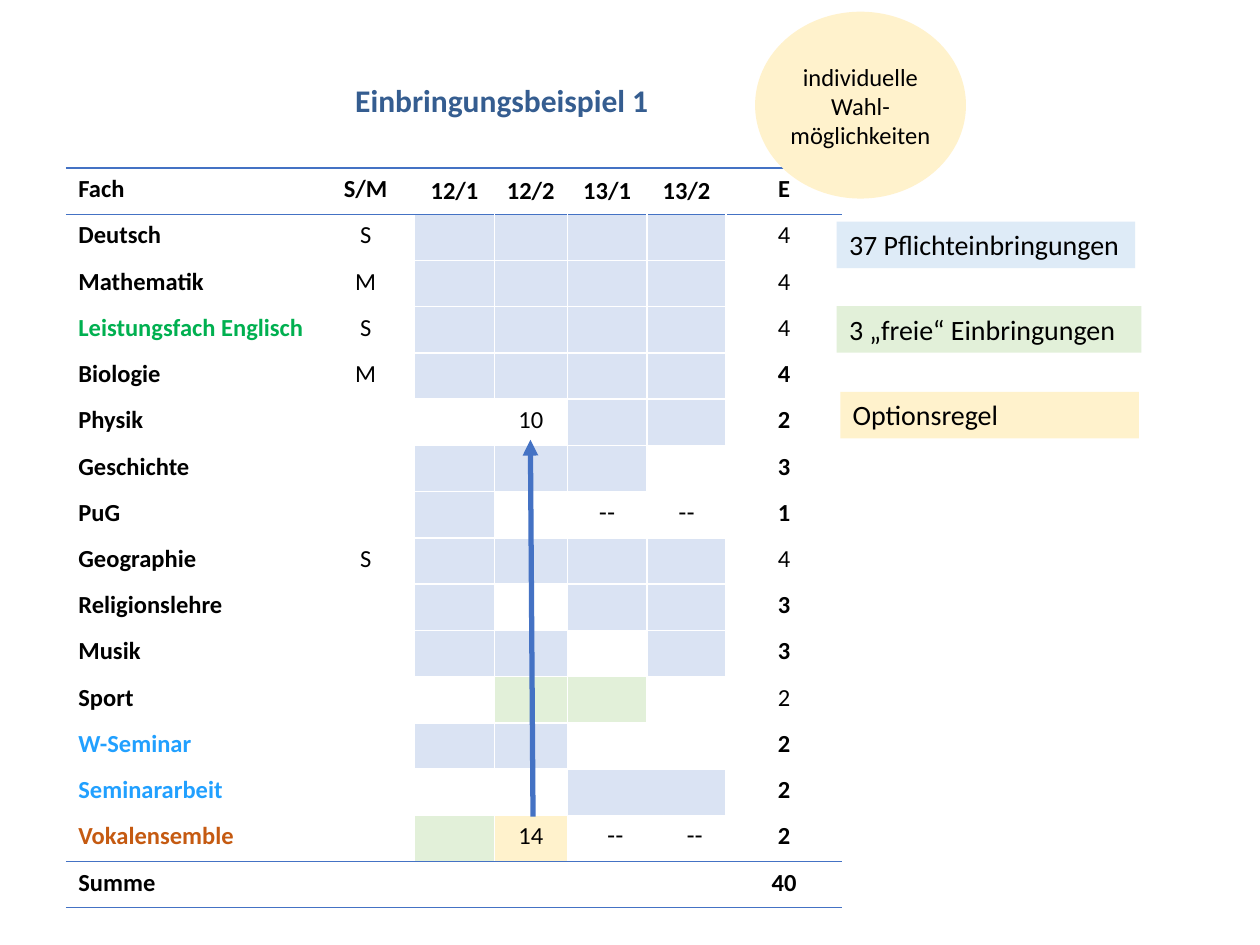
from lxml import etree
from pptx import Presentation
from pptx.dml.color import RGBColor
from pptx.enum import shapes as sh, text as tx
from pptx.oxml.ns import qn
from pptx.util import Pt


def hue(code):
    return RGBColor.from_string(code)


def write(para, words, size, color="000000", bold=False, font="Calibri"):
    run = para.add_run()
    run.text = words
    run.font.size = Pt(size)
    run.font.name = font
    run.font.bold = bold
    run.font.color.rgb = hue(color)


prs = Presentation()
prs.slide_width, prs.slide_height = Pt(720), Pt(540)
slide = prs.slides.add_slide(prs.slide_layouts[5])
mid = tx.PP_ALIGN.CENTER

title = slide.shapes.title
title.left, title.top, title.width, title.height = Pt(195.8), Pt(42.5), Pt(674.6), Pt(62.6)
frame = title.text_frame
frame.auto_size = tx.MSO_AUTO_SIZE.NONE
frame.vertical_anchor = tx.MSO_ANCHOR.TOP
frame.paragraphs[0].alignment = tx.PP_ALIGN.LEFT
write(frame.paragraphs[0], "Einbringungsbeispiel 1", 18, "355D90", True)

blue, white = "4472C4", "FFFFFF"
fills = {"b": "DAE3F3", "g": "E2F0D9", "y": "FFF2CC", "w": white}
rows = [
    ("Deutsch", "S", "bbbb", "4", False, "000000"),
    ("Mathematik", "M", "bbbb", "4", False, "000000"),
    ("Leistungsfach Englisch", "S", "bbbb", "4", False, "00B050"),
    ("Biologie", "M", "bbbb", "4", True, "000000"),
    ("Physik", "", "wwbb", "2", True, "000000"),
    ("Geschichte", "", "bbbw", "3", True, "000000"),
    ("PuG", "", "bwww", "1", True, "000000"),
    ("Geographie", "S", "bbbb", "4", False, "000000"),
    ("Religionslehre", "", "bwbb", "3", True, "000000"),
    ("Musik", "", "bbwb", "3", True, "000000"),
    ("Sport", "", "wggw", "2", False, "000000"),
    ("W-Seminar", "", "bbw", "2", True, "21A0FF"),
    ("Seminararbeit", "", "wwb", "2", True, "21A0FF"),
    ("Vokalensemble", "", "gyww", "2", True, "C55A11"),
]
notes = {(5, 3): "10", (7, 4): "--", (7, 5): "--",
         (14, 3): "14", (14, 4): "--", (14, 6): "--"}
heads = ["Fach", "S/M", "12/1", "12/2", "13/1", "13/2", "", "E"]
wide = [143.3, 56.2, 45.4, 41.8, 45.4, 9.4, 36, 66.2]
last = len(rows) + 1
high = 26.42

grid = slide.shapes.add_table(last + 1, 8, Pt(37.6), Pt(96), Pt(sum(wide)), Pt(high * (last + 1))).table
grid.first_row = grid.horz_banding = False
style = grid._tbl.tblPr.find(qn("a:tableStyleId"))
style.text = "{2D5ABB26-0587-4C30-8999-92F81FD0307C}"
for col, size in zip(grid.columns, wide):
    col.width = Pt(size)
for row in grid.rows:
    row.height = Pt(high)

spans = {12: (4, 6), 13: (4, 6), 14: (4, 5)}
for r in range(last + 1):
    start, end = spans.get(r, (5, 6))
    grid.cell(r, start).merge(grid.cell(r, end))
    marks = rows[r - 1][2] if 0 < r < last else ""
    tint = dict(zip([c for c in range(2, 7) if not start < c <= end], marks))
    for c in range(8):
        cell = grid.cell(r, c)
        para = cell.text_frame.paragraphs[0]
        para._p.get_or_add_endParaRPr().set("sz", "1400")
        if c:
            para.alignment = mid
        words, bold, color, font = "", True, "000000", "Calibri"
        if r == 0:
            words = heads[c]
            if 2 <= c <= 5:
                cell.vertical_anchor = tx.MSO_ANCHOR.MIDDLE
        elif r == last:
            words = {0: "Summe", 7: "40"}.get(c, "")
        else:
            name, kind, _, total, strong, shade = rows[r - 1]
            words = {0: name, 1: kind, 7: total}.get(c) or notes.get((r, c), "")
            bold = c == 0 or (c == 7 and strong)
            color = shade if c == 0 else color
            font = "Arial" if words == "--" else font
        if words:
            write(para, words, 14, color, bold, font)

        edges = {}
        if r in (0, last):
            edges = {"T": blue, "B": blue}
        elif 2 <= c <= 6:
            right = end if c == start else c
            tests = [("L", c > 2), ("R", right < 6), ("T", r > 1), ("B", r < last - 1)]
            edges = {side: white for side, on in tests if on}
        props = cell._tc.get_or_add_tcPr()
        for side, code in edges.items():
            line = etree.SubElement(props, qn("a:ln" + side), w="12700")
            solid = etree.SubElement(line, qn("a:solidFill"))
            etree.SubElement(solid, qn("a:srgbClr"), val=code)
        if c in tint:
            cell.fill.solid()
            cell.fill.fore_color.rgb = hue(fills[tint[c]])
        else:
            cell.fill.background()

kinds = sh.MSO_SHAPE
keys = [
    (kinds.RECTANGLE, 478.1, 126.7, 170.6, 26.6, "DEEBF7", "37 Pflichteinbringungen"),
    (kinds.OVAL, 432, 7.2, 119.5, 105.8, "FFF2CC", ""),
    (kinds.RECTANGLE, 478.1, 175, 174.2, 26.6, "E2F0D9", "3 „freie“ Einbringungen"),
    (kinds.RECTANGLE, 480.2, 223.9, 170.6, 26.6, "FFF2CC", "Optionsregel"),
]
for kind, x, y, w, h, code, words in keys:
    key = slide.shapes.add_shape(kind, Pt(x), Pt(y), Pt(w), Pt(h))
    key.shadow.inherit = False
    key.fill.solid()
    key.fill.fore_color.rgb = hue(code)
    if words:
        key.line.fill.background()
        frame = key.text_frame
        frame.word_wrap = not words.startswith("37")
        frame.vertical_anchor = tx.MSO_ANCHOR.TOP
        frame.paragraphs[0].alignment = tx.PP_ALIGN.LEFT
        write(frame.paragraphs[0], words, 16)
    else:
        key.line.color.rgb = hue(code)
        key.line.width = Pt(1)
        frame = slide.shapes.add_textbox(Pt(440.6), Pt(31.7), Pt(102.2), Pt(58.3)).text_frame
        frame.word_wrap = True
        for i, part in enumerate(["individuelle", "Wahl-", "möglichkeiten"]):
            para = frame.add_paragraph() if i else frame.paragraphs[0]
            para.alignment = mid
            write(para, part, 14)

arrow = slide.shapes.add_connector(sh.MSO_CONNECTOR.STRAIGHT, Pt(304.6), Pt(466.6), Pt(303.1), Pt(251.3))
arrow.line.color.rgb = hue(blue)
arrow.line.width = Pt(3)
etree.SubElement(arrow.line._get_or_add_ln(), qn("a:tailEnd"), type="triangle")
etree.SubElement(arrow._element.spPr, qn("a:effectLst"))

prs.save("out.pptx")
